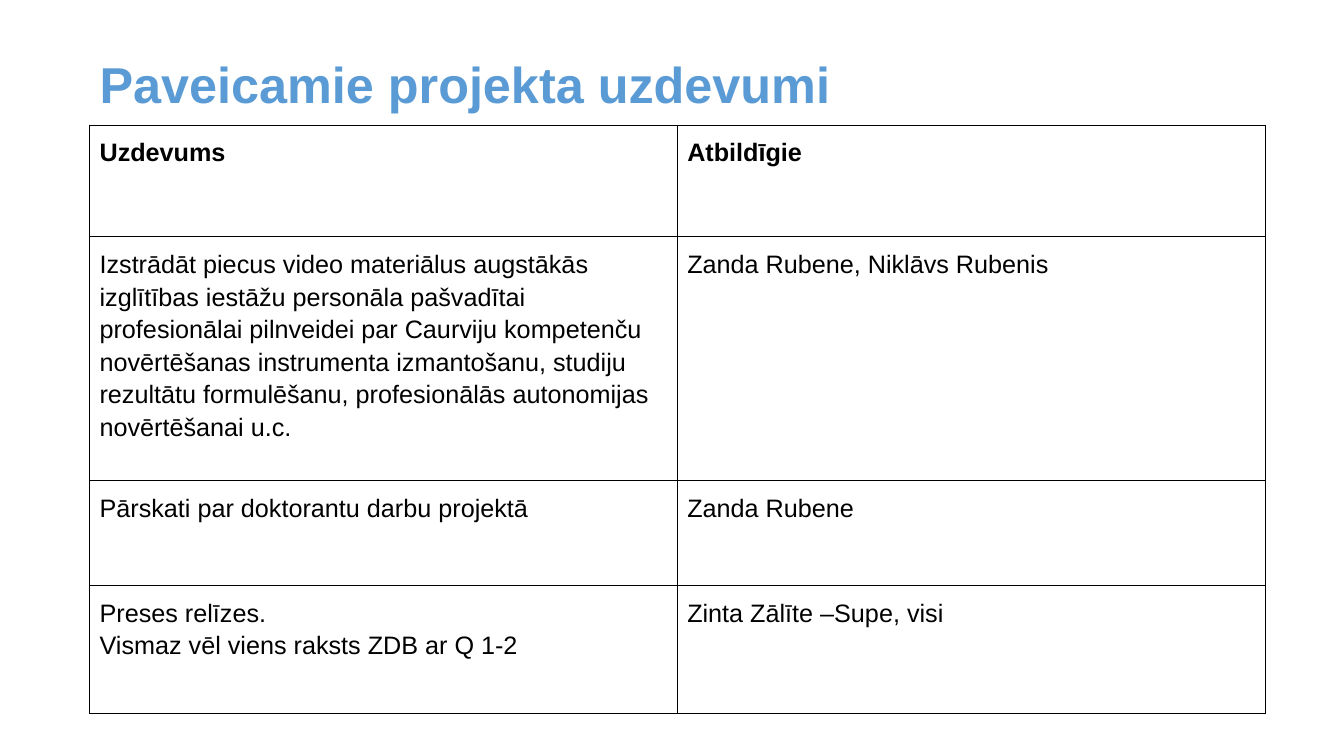
from lxml import etree
from pptx import Presentation
from pptx.dml.color import RGBColor
from pptx.enum import text
from pptx.oxml import ns
from pptx.util import Cm, Pt

# Content
TITLE = "Paveicamie projekta uzdevumi"
TASKS = [
    ("Uzdevums", "Atbildīgie"),
    ("Izstrādāt piecus video materiālus augstākās izglītības iestāžu personāla "
     "pašvadītai profesionālai pilnveidei par Caurviju kompetenču novērtēšanas "
     "instrumenta izmantošanu, studiju rezultātu formulēšanu, profesionālās "
     "autonomijas novērtēšanai u.c.", "Zanda Rubene, Niklāvs Rubenis"),
    ("Pārskati par doktorantu darbu projektā", "Zanda Rubene"),
    ("Preses relīzes.\nVismaz vēl viens raksts ZDB ar Q 1-2",
     "Zinta Zālīte –Supe, visi"),
]
JUSTIFIED = {(2, 0)}

# Theme and layout
THEME = {
    "font": "Arial", "title": "5B9BD5", "ink": "000000",
    "title_size": 36, "body_size": 18, "border": 0.75,
    "title_spacing": 0.9, "body_spacing": 1.15,
}
LEFT, TABLE_TOP = Cm(2.26), Cm(3.15)
COLUMN_WIDTH = Cm(14.81)
ROW_HEIGHTS = [Cm(2.82), Cm(6.14), Cm(2.64), Cm(3.23)]
PADDING = Cm(0.25)


def apply(target, values):
    for name, value in values.items():
        setattr(target, name, value)


def write(frame, words, size, color, bold, spacing, align=text.PP_ALIGN.LEFT):
    frame.text = words
    for para in frame.paragraphs:
        apply(para, {"line_spacing": spacing, "alignment": align})
        for span in para.runs:
            apply(span.font, {"name": THEME["font"], "size": Pt(size), "bold": bold})
            span.font.color.rgb = RGBColor.from_string(color)


def draw_borders(cell):
    props = cell._tc.get_or_add_tcPr()
    for index, side in enumerate(("lnL", "lnR", "lnT", "lnB")):
        line = etree.Element(ns.qn(f"a:{side}"), w=str(Pt(THEME["border"])))
        fill = etree.SubElement(line, ns.qn("a:solidFill"))
        etree.SubElement(fill, ns.qn("a:srgbClr"), val=THEME["ink"])
        props.insert(index, line)


deck = Presentation()
apply(deck, {"slide_width": Cm(33.87), "slide_height": Cm(19.05)})
page = deck.slides.add_slide(deck.slide_layouts[6])

# Title, raised by a deeper bottom margin
box = page.shapes.add_textbox(LEFT, Cm(1.02), Cm(29.21), Cm(3.68))
apply(box.text_frame, {
    "word_wrap": True, "vertical_anchor": text.MSO_ANCHOR.MIDDLE,
    "margin_left": PADDING, "margin_right": PADDING,
    "margin_top": Cm(0.13), "margin_bottom": Cm(1.45),
})
write(box.text_frame, TITLE, THEME["title_size"], THEME["title"], True,
      THEME["title_spacing"])

# Task table
columns = len(TASKS[0])
table = page.shapes.add_table(len(TASKS), columns, LEFT, TABLE_TOP,
                              COLUMN_WIDTH * columns, sum(ROW_HEIGHTS)).table
apply(table, {"first_row": False, "horz_banding": False})
for column in table.columns:
    column.width = COLUMN_WIDTH
for r, (height, task) in enumerate(zip(ROW_HEIGHTS, TASKS)):
    table.rows[r].height = height
    for c, words in enumerate(task):
        cell = table.cell(r, c)
        apply(cell, {f"margin_{side}": PADDING
                     for side in ("left", "right", "top", "bottom")})
        cell.fill.background()
        draw_borders(cell)
        align = text.PP_ALIGN.JUSTIFY if (r, c) in JUSTIFIED else text.PP_ALIGN.LEFT
        write(cell.text_frame, words, THEME["body_size"], THEME["ink"], r == 0,
              THEME["body_spacing"], align)

deck.save("out.pptx")
